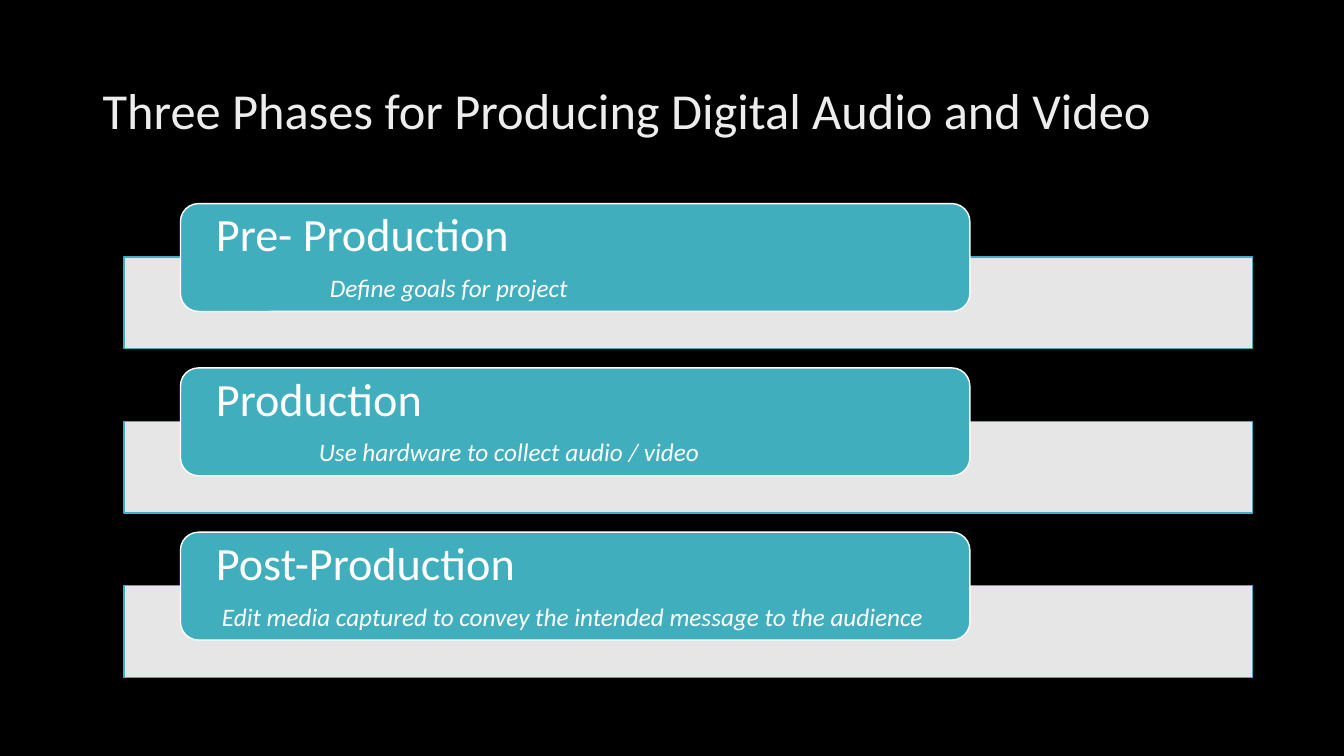
"""Build a slide showing the three phases of producing digital audio and video."""
import pptx
import pptx.dml.color
import pptx.enum.shapes
import pptx.enum.text
import pptx.oxml.ns
import pptx.util
from lxml import etree

Inches = pptx.util.Inches
Pt = pptx.util.Pt
SHAPES = pptx.enum.shapes.MSO_SHAPE
MIDDLE = pptx.enum.text.MSO_ANCHOR.MIDDLE
LEFT = pptx.enum.text.PP_ALIGN.LEFT
COLORS = {"background": "000000", "title": "EDEDED", "teal": "41AEBD", "white": "FFFFFF"}
FONT = "Calibri"
PITCH = 1.63
PHASES = [
    ("Pre- Production", "Define goals for project", 1.13),
    ("Production", "Use hardware to collect audio / video", 1.02),
    ("Post-Production", "Edit media captured to convey the intended message to the audience", 0.06),
]


def add_panel(kind, left, top, width, height, fill, line):
    panel = page.shapes.add_shape(kind, Inches(left), Inches(top), Inches(width), Inches(height))
    panel.shadow.inherit = False
    panel.fill.solid()
    panel.fill.fore_color.rgb = pptx.dml.color.RGBColor.from_string(COLORS[fill])
    panel.line.color.rgb = pptx.dml.color.RGBColor.from_string(COLORS[line])
    panel.line.width = Pt(1)
    return panel


def style_paragraph(para, size, color, italic=False):
    para.alignment = LEFT
    para.line_spacing = 0.9
    for span in para.runs:
        span.font.name = FONT
        span.font.size = Pt(size)
        span.font.italic = italic
        span.font.color.rgb = pptx.dml.color.RGBColor.from_string(COLORS[color])


deck = pptx.Presentation()
deck.slide_width = Inches(13.33)
deck.slide_height = Inches(7.5)
page = deck.slides.add_slide(deck.slide_layouts[6])
page.background.fill.solid()
page.background.fill.fore_color.rgb = pptx.dml.color.RGBColor.from_string(COLORS["background"])

title = page.shapes.add_textbox(Inches(0.92), Inches(0.4), Inches(11.5), Inches(1.45))
title.text_frame.word_wrap = True
title.text_frame.vertical_anchor = MIDDLE
title.text_frame.text = "Three Phases for Producing Digital Audio and Video"
style_paragraph(title.text_frame.paragraphs[0], 36, "title")

for index, (phase, goal, indent) in enumerate(PHASES):
    top = 2.02 + index * PITCH
    band = add_panel(SHAPES.RECTANGLE, 1.23, top + 0.53, 11.19, 0.91, "white", "teal")
    band_color = band.fill._xPr.find(".//" + pptx.oxml.ns.qn("a:srgbClr"))
    etree.SubElement(band_color, pptx.oxml.ns.qn("a:alpha"), val="90000")

    box = add_panel(SHAPES.ROUNDED_RECTANGLE, 1.79, top, 7.83, 1.07, "teal", "white")
    frame = box.text_frame
    frame.word_wrap = True
    frame.vertical_anchor = MIDDLE
    frame.margin_left = frame.margin_right = Inches(0.3)
    frame.margin_top = frame.margin_bottom = 0
    frame.text = phase + "\n" + goal
    heading, detail = frame.paragraphs
    style_paragraph(heading, 33, "white")
    heading.space_after = Pt(10)
    style_paragraph(detail, 18, "white", italic=True)
    detail._p.get_or_add_pPr().set("marL", str(Inches(indent)))

deck.save("out.pptx")
